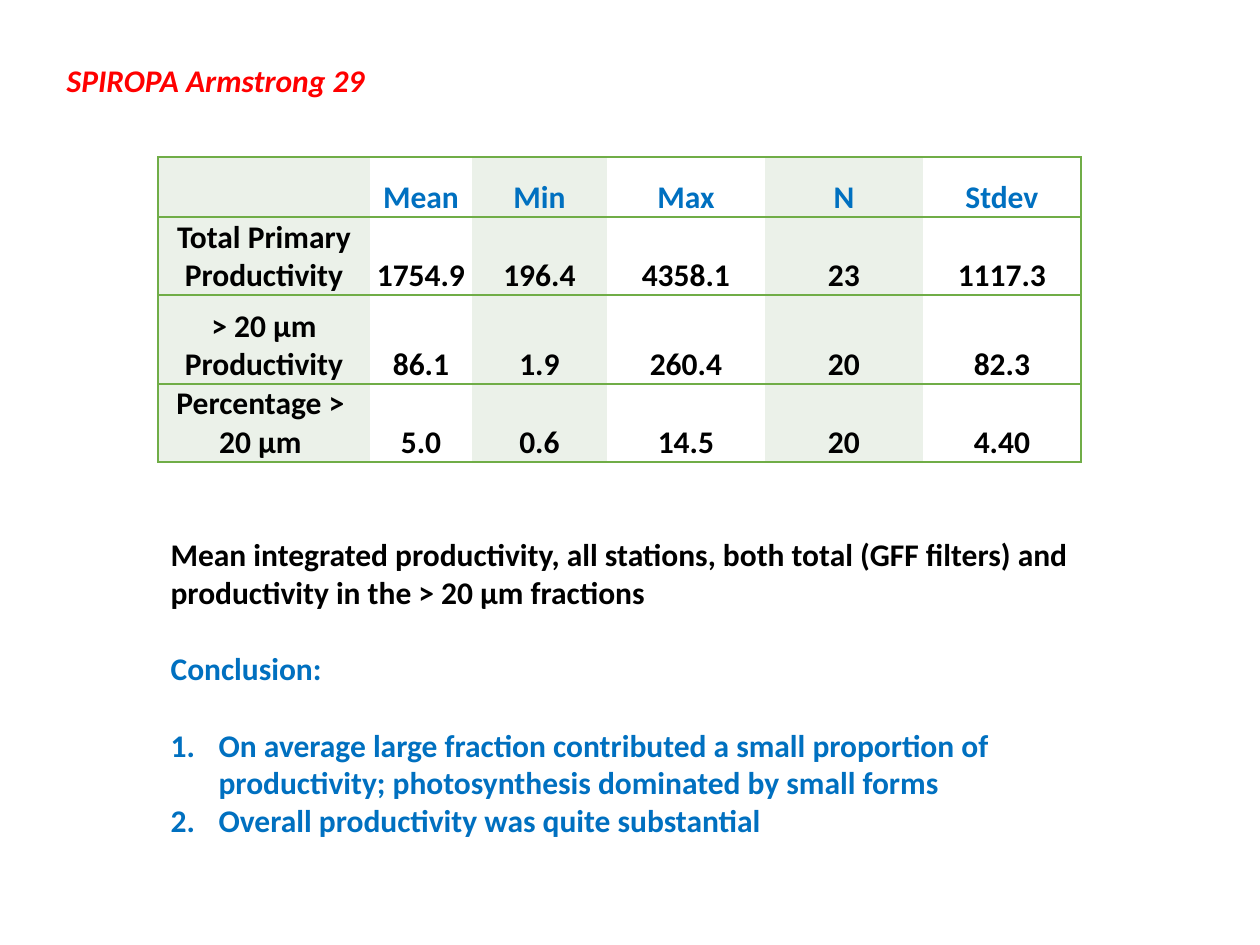
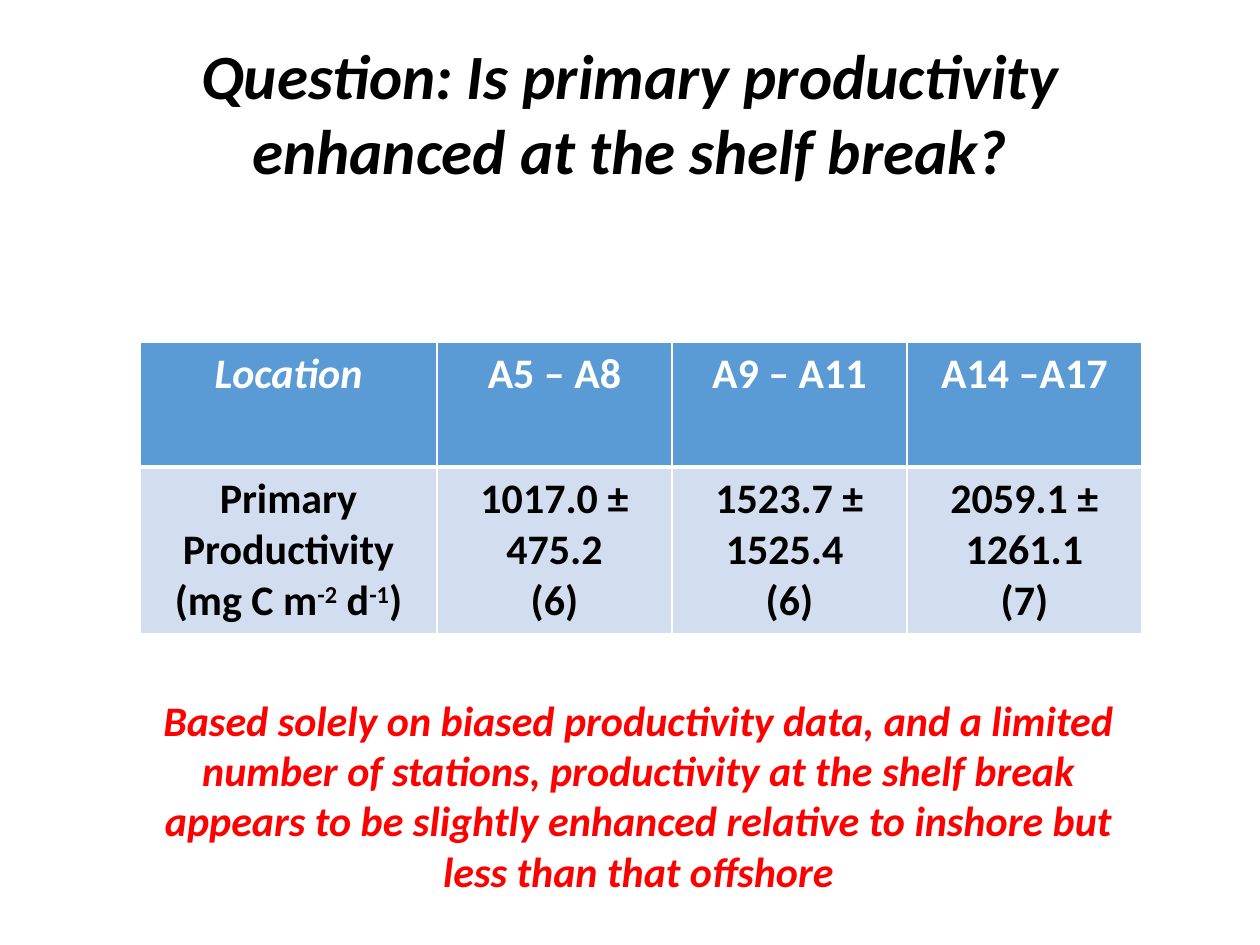
"""Build two slides on primary productivity: a summary table and a shelf break comparison."""

from lxml.etree import SubElement
from pptx import Presentation
from pptx.dml.color import RGBColor
from pptx.enum.text import MSO_ANCHOR as Anchor, MSO_AUTO_SIZE as AutoSize, PP_ALIGN as Align
from pptx.oxml.ns import qn
from pptx.util import Emu, Pt

PIXEL = 914400 // 126
FONT = "Calibri"
NO_TABLE_STYLE = "{2D5ABB26-0587-4C30-8999-92F81FD0307C}"
TITLE_AND_BODY, TITLE_ONLY = 1, 5

BLACK = RGBColor(0x00, 0x00, 0x00)
WHITE = RGBColor(0xFF, 0xFF, 0xFF)
RED = RGBColor(0xFF, 0x00, 0x00)
BLUE = RGBColor(0x00, 0x70, 0xC0)
GREEN = RGBColor(0x70, 0xAD, 0x47)
PALE_GREEN = RGBColor(0xEB, 0xF1, 0xE9)
HEADER_BLUE = RGBColor(0x5B, 0x9B, 0xD5)
PALE_BLUE = RGBColor(0xD2, 0xDE, 0xEF)


def px(length):
    return Emu(length * PIXEL)


class Deck:
    def __init__(self):
        self.presentation = Presentation()
        self.presentation.slide_width = px(1260)
        self.presentation.slide_height = px(945)
        self.slide = None

    def add_slide(self, layout):
        self.slide = self.presentation.slides.add_slide(self.presentation.slide_layouts[layout])

    def style(self, paragraph, size, color, italic=False, align=Align.LEFT, before=0):
        paragraph.alignment = align
        paragraph.space_before = Pt(before)
        font = paragraph.font
        font.name, font.size, font.bold, font.italic = FONT, Pt(size), True, italic
        font.color.rgb = color

    def add_runs(self, paragraph, text):
        for position, part in enumerate(text.split("^")):
            run = paragraph.add_run()
            run.text = part
            if position % 2:
                run._r.get_or_add_rPr().set("baseline", "30000")

    def place(self, shape, box):
        shape.left, shape.top, shape.width, shape.height = map(px, box)
        frame = shape.text_frame
        frame.word_wrap = True
        frame.auto_size = AutoSize.NONE
        frame.vertical_anchor = Anchor.TOP
        return frame

    def title(self, text, box, size, color, align):
        frame = self.place(self.slide.shapes.title, box)
        frame.text = text
        self.style(frame.paragraphs[0], size, color, True, align)

    def text_box(self, text, box, size, color):
        frame = self.place(self.slide.shapes.add_textbox(0, 0, 0, 0), box)
        frame.text = text
        self.style(frame.paragraphs[0], size, color, True, Align.CENTER)

    def body(self, items, box, size):
        frame = self.place(self.slide.placeholders[1], box)
        frame.text = "\n".join(text for text, *_ in items)
        for paragraph, (_, color, numbered, before) in zip(frame.paragraphs, items):
            self.bullet(paragraph, 48 if numbered else 0)
            self.style(paragraph, size, color, before=before)

    def bullet(self, paragraph, indent):
        properties = paragraph._p.get_or_add_pPr()
        properties.set("marL", str(px(indent)))
        properties.set("indent", str(-px(indent)))
        if indent:
            SubElement(properties, qn("a:buFont"), typeface="+mj-lt")
            SubElement(properties, qn("a:buAutoNum"), type="arabicPeriod")
        else:
            SubElement(properties, qn("a:buNone"))

    def table(self, rows, corner, widths, heights):
        frame = self.slide.shapes.add_table(
            len(rows), len(widths), *map(px, (*corner, sum(widths), sum(heights))))
        table = frame.table
        table.first_row = table.horz_banding = False
        table._tbl.tblPr.find(qn("a:tableStyleId")).text = NO_TABLE_STYLE
        for column, width in zip(table.columns, widths):
            column.width = px(width)
        for row, height in zip(table.rows, heights):
            row.height = px(height)
        return table

    def cell(self, cell, text, fill, borders, size, color, italic=False):
        for side in "LRTB":
            if side in borders:
                self.border(cell, side, *borders[side])
        cell.fill.solid()
        cell.fill.fore_color.rgb = fill
        frame = cell.text_frame
        for position, line in enumerate(text.split("\n")):
            paragraph = frame.add_paragraph() if position else frame.paragraphs[0]
            if line:
                self.add_runs(paragraph, line)
            self.style(paragraph, size, color, italic, Align.CENTER)

    def border(self, cell, side, color, width):
        line = SubElement(cell._tc.get_or_add_tcPr(), qn(f"a:ln{side}"), w=str(Pt(width)))
        SubElement(SubElement(line, qn("a:solidFill")), qn("a:srgbClr"), val=str(color))

    def summary_table(self, rows, corner, widths, heights):
        table = self.table(rows, corner, widths, heights)
        line = (GREEN, 1)
        for r, texts in enumerate(rows):
            for c, text in enumerate(texts):
                cell = table.cell(r, c)
                cell.vertical_anchor = Anchor.BOTTOM
                cell.margin_left = cell.margin_right = cell.margin_top = px(1)
                cell.margin_bottom = 0
                borders = {"T": line, "B": line}
                if c == 0:
                    borders["L"] = line
                if c == len(widths) - 1:
                    borders["R"] = line
                self.cell(cell, text, WHITE if c % 2 else PALE_GREEN, borders,
                          18, BLACK if r else BLUE)

    def location_table(self, rows, corner, widths, heights):
        table = self.table(rows, corner, widths, heights)
        for r, texts in enumerate(rows):
            borders = dict.fromkeys("LRTB", (WHITE, 1))
            borders["T" if r else "B"] = (WHITE, 3)
            for c, text in enumerate(texts):
                self.cell(table.cell(r, c), text, PALE_BLUE if r else HEADER_BLUE, borders,
                          24, BLACK if r else WHITE, italic=r == c == 0)


SUMMARY = [
    ("", "Mean", "Min", "Max", "N", "Stdev"),
    ("Total Primary Productivity", "1754.9", "196.4", "4358.1", "23", "1117.3"),
    ("> 20 µm Productivity", "86.1", "1.9", "260.4", "20", "82.3"),
    ("Percentage > \n20 µm ", "5.0", "0.6", "14.5", "20", "4.40"),
]
FINDINGS = [
    ("Mean integrated productivity, all stations, both total (GFF filters) and "
     "productivity in the > 20 µm fractions", BLACK, False, 0),
    ("Conclusion: ", BLUE, False, 22),
    ("On average large fraction contributed a small proportion of productivity; "
     "photosynthesis dominated by small forms", BLUE, True, 22),
    ("Overall productivity was quite substantial", BLUE, True, 0),
]
LOCATIONS = [
    ("Location", "A5 – A8", "A9 – A11", "A14 –A17"),
    ("Primary Productivity (mg C m^-2^ d^-1^)", "1017.0 ± 475.2\n(6)",
     "1523.7 ± 1525.4 \n(6)", "2059.1 ± 1261.1\n(7)"),
]

deck = Deck()

deck.add_slide(TITLE_AND_BODY)
deck.title("SPIROPA Armstrong 29 ", (54, 55, 508, 51), 18, RED, Align.LEFT)
deck.body(FINDINGS, (158, 529, 924, 318), 18)
deck.summary_table(SUMMARY, (158, 157), (212, 102, 135, 158, 158, 158), (60, 77, 89, 77))

deck.add_slide(TITLE_ONLY)
deck.location_table(LOCATIONS, (140, 342), (297, 235, 235, 235), (125, 165))
deck.title("Question: Is primary productivity enhanced at the shelf break?",
           (135, 30, 990, 165), 36, BLACK, Align.CENTER)
deck.text_box("Based solely on biased productivity data, and a limited number of stations, "
              "productivity at the shelf break appears to be slightly enhanced relative to "
              "inshore but less than that offshore", (135, 688, 1007, 217), 24, RED)

deck.presentation.save("out.pptx")
